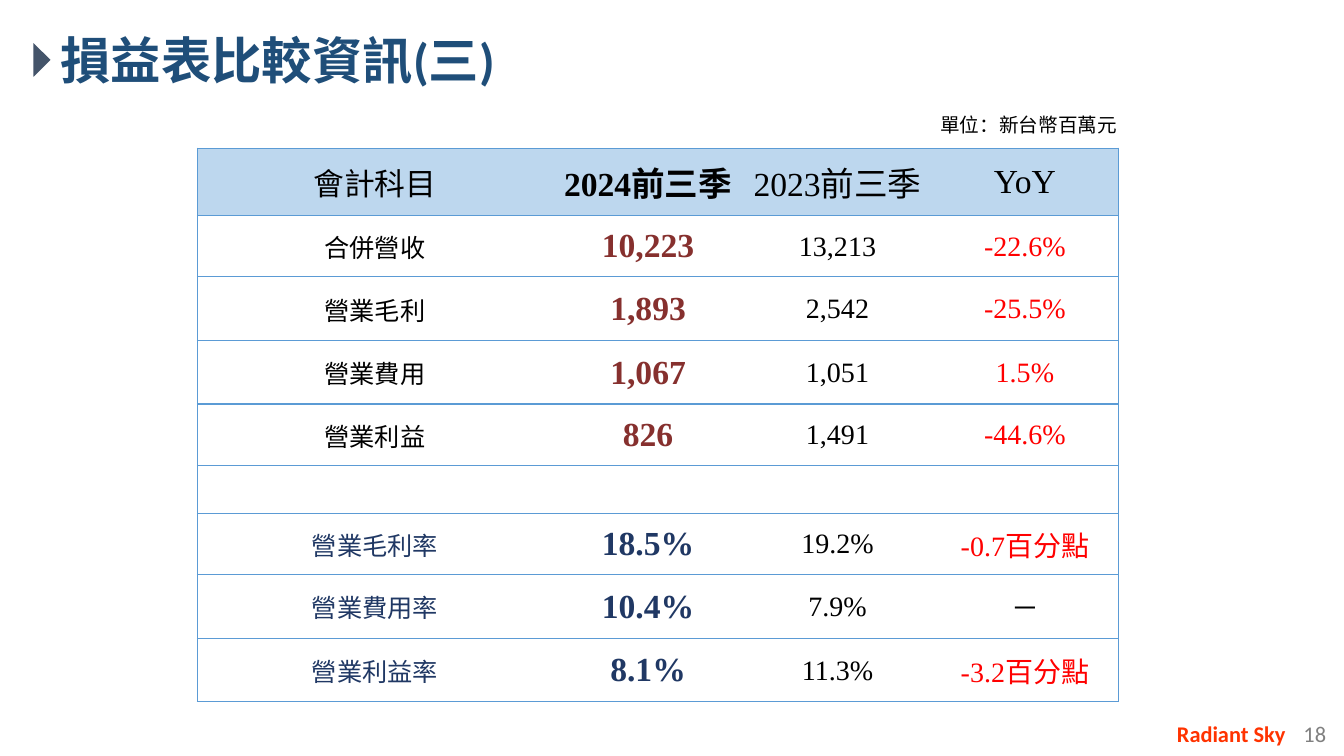
from lxml import etree
from pptx import Presentation
from pptx.dml.color import RGBColor
from pptx.enum.shapes import MSO_SHAPE
from pptx.enum.text import MSO_ANCHOR, PP_ALIGN
from pptx.oxml.ns import qn
from pptx.util import Pt

TRIANGLE = MSO_SHAPE.ISOSCELES_TRIANGLE
MIDDLE = MSO_ANCHOR.MIDDLE
LEFT, CENTER = PP_ALIGN.LEFT, PP_ALIGN.CENTER

BLACK = RGBColor(0x00, 0x00, 0x00)
WHITE = RGBColor(0xFF, 0xFF, 0xFF)
GRAY = RGBColor(0x80, 0x80, 0x80)
SLATE = RGBColor(0x44, 0x54, 0x6A)
BLUE = RGBColor(0x1F, 0x4E, 0x79)
NAVY = RGBColor(0x20, 0x38, 0x64)
PALE = RGBColor(0xBD, 0xD7, 0xEE)
RULE = RGBColor(0x5B, 0x9B, 0xD5)
RED = RGBColor(0xFF, 0x00, 0x00)
MAROON = RGBColor(0x86, 0x30, 0x2E)
ORANGE = RGBColor(0xFF, 0x33, 0x00)

SANS, SERIF, CJK = "Calibri", "Times New Roman", "Noto Sans CJK SC"

HEAD = ["會計科目", "2024前三季", "2023前三季", "YoY"]
AMOUNTS = [
    ["合併營收", "10,223", "13,213", "-22.6%"],
    ["營業毛利", "1,893", "2,542", "-25.5%"],
    ["營業費用", "1,067", "1,051", "1.5%"],
    ["營業利益", "826", "1,491", "-44.6%"],
]
RATIOS = [
    ["營業毛利率", "18.5%", "19.2%", "-0.7百分點"],
    ["營業費用率", "10.4%", "7.9%", "─"],
    ["營業利益率", "8.1%", "11.3%", "-3.2百分點"],
]
GRID = [HEAD, *AMOUNTS, [""] * 4, *RATIOS]
COLS = [253.4, 136.8, 133.9, 133.9]
ROWS = [48, 44, 45.4, 45.4, 44, 34, 44, 45.4, 45.4]


def style(row, col):
    """Give size, colour and weight of a table cell."""
    bold = col == 1
    if row == 0:
        return 24 if col else 22, BLACK, bold
    ratio = row > len(AMOUNTS)
    if col == 0:
        return 18, NAVY if ratio else BLACK, bold
    if col == 1:
        return 24, NAVY if ratio else MAROON, bold
    plain = col == 2 or GRID[row][col] == "─"
    return 20, BLACK if plain else RED, bold


class Page:
    def __init__(self, deck):
        self.slide = deck.slides.add_slide(deck.slide_layouts[6])
        self.shapes = self.slide.shapes

    def label(self, para, text, face, size, color, bold=False, align=LEFT):
        """Add one styled run to a paragraph."""
        para.alignment = align
        run = para.add_run()
        run.text = text
        form = {"size": Pt(size), "bold": bold, "name": face}
        for key, value in form.items():
            setattr(run.font, key, value)
        run.font.color.rgb = color
        asian = etree.SubElement(run.font._element, qn("a:ea"))
        asian.set("typeface", CJK)

    def text(self, spot, words, face, size, color, wrap=True, right=7.2, **form):
        box = self.shapes.add_textbox(*map(Pt, spot))
        frame = box.text_frame
        frame.word_wrap = wrap
        frame.margin_right = Pt(right)
        self.label(frame.paragraphs[0], words, face, size, color, **form)

    def marker(self, spot, color):
        mark = self.shapes.add_shape(TRIANGLE, *map(Pt, spot))
        mark.rotation = 90
        mark.shadow.inherit = False
        mark.fill.solid()
        mark.fill.fore_color.rgb = color
        mark.line.fill.background()

    def border(self, cell, sides):
        """Rule the named sides and clear the others."""
        props = cell._tc.get_or_add_tcPr()
        for spot, side in enumerate("LRTB"):
            line = etree.Element(qn(f"a:ln{side}"), w=str(Pt(1)))
            if side in sides:
                fill = etree.SubElement(line, qn("a:solidFill"))
                etree.SubElement(fill, qn("a:srgbClr"), val=str(RULE))
            else:
                etree.SubElement(line, qn("a:noFill"))
            props.insert(spot, line)

    def table(self, left, top):
        size = (left, top, sum(COLS), sum(ROWS))
        table = self.shapes.add_table(len(ROWS), len(COLS), *map(Pt, size)).table
        table.first_row = table.horz_banding = False
        for col, width in zip(table.columns, COLS):
            col.width = Pt(width)
        for row, height in zip(table.rows, ROWS):
            row.height = Pt(height)
        form = {"vertical_anchor": MIDDLE, "margin_left": Pt(0.7),
                "margin_right": Pt(0.7), "margin_top": Pt(0.7), "margin_bottom": 0}
        ends = {0: "L", len(COLS) - 1: "R"}
        for i, line in enumerate(GRID):
            for j, words in enumerate(line):
                cell = table.cell(i, j)
                for key, value in form.items():
                    setattr(cell, key, value)
                cell.fill.solid()
                cell.fill.fore_color.rgb = WHITE if i else PALE
                self.border(cell, "TB" + ends.get(j, ""))
                if words:
                    para = cell.text_frame.paragraphs[0]
                    self.label(para, words, SERIF, *style(i, j), align=CENTER)


def main():
    deck = Presentation()
    deck.slide_width, deck.slide_height = Pt(960), Pt(540)
    page = Page(deck)
    page.text((924, 511, 36, 27), "18", SANS, 16, GRAY, wrap=False)
    page.text((817, 511, 125, 27), "Radiant Sky", SANS, 16, ORANGE,
              bold=True, align=CENTER)
    page.text((36, 17.3, 342, 51), "損益表比較資訊(三)", SANS, 36, BLUE,
              right=24, bold=True)
    page.marker((18, 36.7, 24, 12.2), SLATE)
    page.table(141.1, 105.8)
    page.text((664.6, 77, 142, 24.5), "單位：新台幣百萬元", CJK, 14, BLACK, wrap=False)
    deck.save("out.pptx")


if __name__ == "__main__":
    main()
